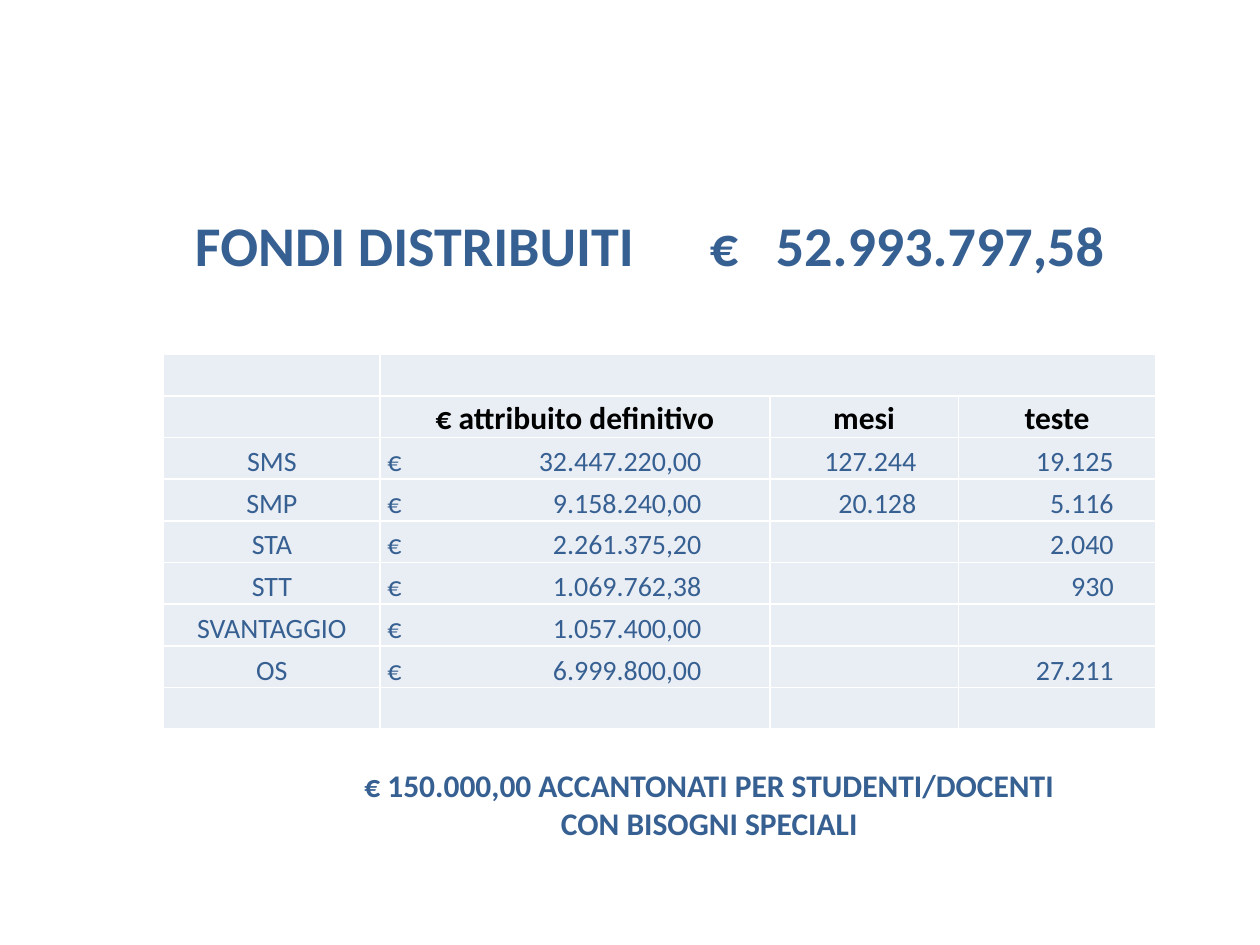
from dataclasses import dataclass

from lxml import etree
from pptx import Presentation
from pptx.dml.color import RGBColor
from pptx.enum.text import MSO_ANCHOR, MSO_AUTO_SIZE, PP_ALIGN
from pptx.oxml.ns import qn
from pptx.util import Cm, Pt

CENTER, LEFT, RIGHT = PP_ALIGN.CENTER, PP_ALIGN.LEFT, PP_ALIGN.RIGHT
BOTTOM, TOP = MSO_ANCHOR.BOTTOM, MSO_ANCHOR.TOP
FIXED_SIZE = MSO_AUTO_SIZE.NONE
TITLE_ONLY = 5
FONT = "Calibri"
COLORS = {"blue": "376092", "header": "000000", "cell": "E9EDF4"}


@dataclass
class Fund:
    name: str
    amount: str
    months: str = ""
    heads: str = ""


@dataclass
class Column:
    heading: str
    width: float
    align: PP_ALIGN
    left_margin: float = 0.03
    right_margin: float = 0.03
    tab: float = 0


FUNDS = [
    Fund("SMS", "32.447.220,00", "127.244", "19.125"),
    Fund("SMP", "9.158.240,00", "20.128", "5.116"),
    Fund("STA", "2.261.375,20", heads="2.040"),
    Fund("STT", "1.069.762,38", heads="930"),
    Fund("SVANTAGGIO", "1.057.400,00"),
    Fund("OS", "6.999.800,00", heads="27.211"),
]
COLUMNS = [
    Column("", 4.36, CENTER),
    Column("€ attribuito definitivo", 7.86, LEFT, left_margin=0.15, tab=6.33),
    Column("mesi", 3.8, RIGHT, right_margin=0.85),
    Column("teste", 3.98, RIGHT, right_margin=0.85),
]
ROW_HEIGHT = 0.84


def add_tabs(paragraph, stops: list[float], align: str) -> None:
    tab_list = etree.SubElement(paragraph._p.get_or_add_pPr(), qn("a:tabLst"))
    for stop in stops:
        etree.SubElement(tab_list, qn("a:tab"), pos=str(Cm(stop)), algn=align)


def format_runs(paragraph, size: int, color: str, bold: bool) -> None:
    for run in paragraph.runs:
        run.font.name = FONT
        run.font.size = Pt(size)
        run.font.bold = bold
        run.font.color.rgb = RGBColor.from_string(COLORS[color])


def place(shape, left: float, top: float, width: float, height: float) -> None:
    shape.left, shape.top = Cm(left), Cm(top)
    shape.width, shape.height = Cm(width), Cm(height)


def fill_cell(cell, text: str, column: Column, is_heading: bool) -> None:
    cell.fill.solid()
    cell.fill.fore_color.rgb = RGBColor.from_string(COLORS["cell"])
    cell.vertical_anchor = BOTTOM
    cell.margin_top, cell.margin_bottom = Cm(0.03), Cm(0)
    cell.margin_left = Cm(0.03 if is_heading else column.left_margin)
    cell.margin_right = Cm(0.03 if is_heading else column.right_margin)
    paragraph = cell.text_frame.paragraphs[0]
    paragraph.text = text
    paragraph.alignment = CENTER if is_heading else column.align
    if column.tab and not is_heading:
        add_tabs(paragraph, [column.tab], "r")
    if is_heading:
        format_runs(paragraph, 18, "header", True)
    else:
        format_runs(paragraph, 16, "blue", False)


def add_title(slide) -> None:
    title = slide.shapes.title
    place(title, 3.3, 4.11, 19.61, 1.63)
    frame = title.text_frame
    frame.auto_size = FIXED_SIZE
    frame.vertical_anchor = TOP
    frame.margin_left = Cm(0.63)
    frame.text = "FONDI DISTRIBUITI\t€\t52.993.797,58"
    paragraph = frame.paragraphs[0]
    paragraph.alignment = LEFT
    add_tabs(paragraph, [10.38, 11.71], "l")
    format_runs(paragraph, 32, "blue", True)


def add_fund_table(slide) -> None:
    blank = [""] * len(COLUMNS)
    headings = [column.heading for column in COLUMNS]
    fund_rows = [[f.name, f"€\t{f.amount}", f.months, f.heads] for f in FUNDS]
    rows = [blank, headings, *fund_rows, blank]
    width = sum(column.width for column in COLUMNS)
    table = slide.shapes.add_table(
        len(rows), len(COLUMNS), Cm(3.3), Cm(7.14), Cm(width), Cm(ROW_HEIGHT * len(rows))
    ).table
    table.first_row = table.horz_banding = False
    for index, column in enumerate(COLUMNS):
        table.columns[index].width = Cm(column.width)
    for row_index, texts in enumerate(rows):
        table.rows[row_index].height = Cm(ROW_HEIGHT)
        for index, (text, column) in enumerate(zip(texts, COLUMNS)):
            fill_cell(table.cell(row_index, index), text, column, row_index == 1)
    table.cell(0, 1).merge(table.cell(0, 3))


def add_reserve_note(slide) -> None:
    note = slide.shapes.add_textbox(Cm(6.3), Cm(15.32), Cm(16), Cm(1.8))
    frame = note.text_frame
    frame.word_wrap = True
    frame.margin_left = frame.margin_right = Cm(0.6)
    frame.text = "€ 150.000,00 ACCANTONATI PER STUDENTI/DOCENTI CON BISOGNI SPECIALI"
    paragraph = frame.paragraphs[0]
    paragraph.alignment = CENTER
    format_runs(paragraph, 18, "blue", True)


def main() -> None:
    presentation = Presentation()
    presentation.slide_width, presentation.slide_height = Cm(25.4), Cm(19.05)
    slide = presentation.slides.add_slide(presentation.slide_layouts[TITLE_ONLY])

    # Total distributed
    add_title(slide)
    # Breakdown by fund
    add_fund_table(slide)
    # Amount set aside
    add_reserve_note(slide)

    presentation.save("out.pptx")


if __name__ == "__main__":
    main()
